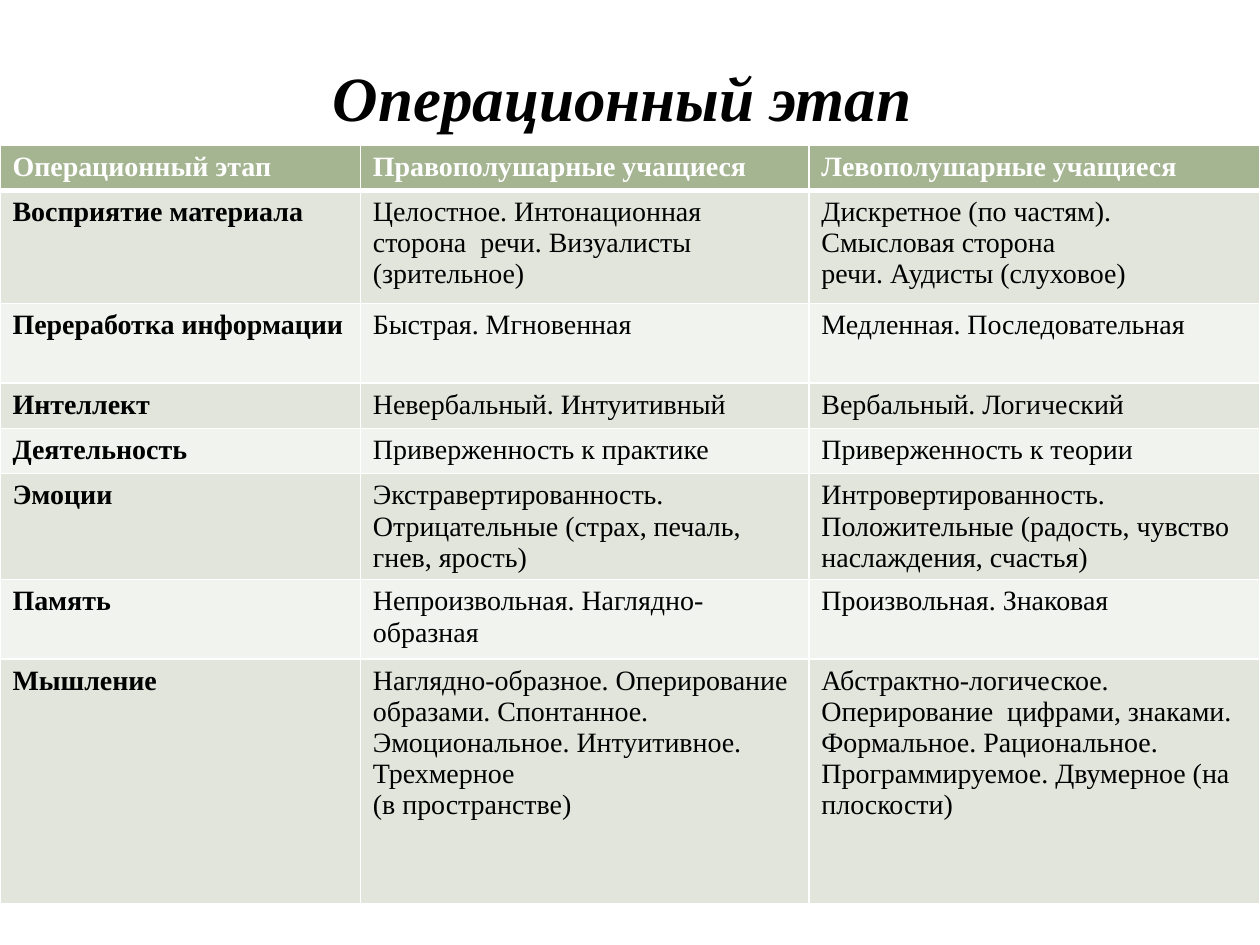
from lxml import etree
from pptx import Presentation
from pptx.dml.color import RGBColor
from pptx.enum.text import MSO_ANCHOR, PP_ALIGN
from pptx.oxml.ns import qn
from pptx.util import Inches, Pt

MIDDLE = MSO_ANCHOR.MIDDLE
CENTER = PP_ALIGN.CENTER
FONT = "Times New Roman"
WHITE, BLACK = "FFFFFF", "000000"
HEADER_FILL = "A5B592"
BAND_FILLS = ["F0F3EE", "E1E5DC"]
COLUMN_WIDTHS = [2.86, 3.56, 3.58]
ROW_HEIGHTS = [0.36, 0.9, 0.63, 0.36, 0.36, 0.8, 0.63, 1.94]

# Each line break within a cell starts a new paragraph
COMPARISON = [
    ("Операционный этап", "Правополушарные учащиеся", "Левополушарные учащиеся"),
    ("Восприятие материала",
     "Целостное. Интонационная сторона  речи. Визуалисты\n(зрительное)",
     "Дискретное (по частям).\nСмысловая сторона\nречи. Аудисты (слуховое)"),
    ("Переработка информации", "Быстрая. Мгновенная", "Медленная. Последовательная"),
    ("Интеллект", "Невербальный. Интуитивный", "Вербальный. Логический"),
    ("Деятельность", "Приверженность к практике", "Приверженность к теории"),
    ("Эмоции",
     "Экстравертированность. Отрицательные (страх, печаль, гнев, ярость)",
     "Интровертированность.\nПоложительные (радость, чувство наслаждения, счастья)"),
    ("Память", "Непроизвольная. Наглядно-образная", "Произвольная. Знаковая"),
    ("Мышление",
     "Наглядно-образное. Оперирование\n"
     "образами. Спонтанное. Эмоциональное. Интуитивное. Трехмерное\n"
     "(в пространстве)",
     "Абстрактно-логическое. Оперирование  цифрами, знаками. Формальное. "
     "Рациональное. Программируемое. Двумерное (на плоскости)"),
]


def style_text(text_frame, size, color, bold, italic=False):
    for paragraph in text_frame.paragraphs:
        for run in paragraph.runs:
            font = run.font
            font.name, font.size = FONT, Pt(size)
            font.bold, font.italic = bold, italic
            font.color.rgb = RGBColor.from_string(color)


def add_border(cell, side, width):
    line = etree.SubElement(cell._tc.get_or_add_tcPr(), qn(f"a:ln{side}"), w=str(Pt(width)))
    fill = etree.SubElement(line, qn("a:solidFill"))
    etree.SubElement(fill, qn("a:srgbClr"), val=WHITE)


prs = Presentation()
prs.slide_width, prs.slide_height = Inches(10), Inches(7.5)
slide = prs.slides.add_slide(prs.slide_layouts[5])

# Title
title = slide.shapes.title
title.left, title.top = Inches(0.5), Inches(0.3)
title.width, title.height = Inches(9), Inches(0.93)
title.text_frame.text = "Операционный этап "
title.text_frame.vertical_anchor = MIDDLE
title.text_frame.paragraphs[0].alignment = CENTER
style_text(title.text_frame, 36, BLACK, bold=True, italic=True)

# Comparison table
table = slide.shapes.add_table(
    len(ROW_HEIGHTS), len(COLUMN_WIDTHS), Inches(0), Inches(1.15),
    Inches(sum(COLUMN_WIDTHS)), Inches(sum(ROW_HEIGHTS))).table
for column, width in zip(table.columns, COLUMN_WIDTHS):
    column.width = Inches(width)
for row, height in zip(table.rows, ROW_HEIGHTS):
    row.height = Inches(height)

for r, entries in enumerate(COMPARISON):
    is_header = r == 0
    for c, entry in enumerate(entries):
        cell = table.cell(r, c)
        cell.text_frame.text = entry
        style_text(cell.text_frame, 16, WHITE if is_header else BLACK,
                   bold=is_header or c == 0)
        # The rule under the header is thicker than the others
        add_border(cell, "L", 1)
        add_border(cell, "R", 1)
        add_border(cell, "T", 3 if r == 1 else 1)
        add_border(cell, "B", 3 if is_header else 1)
        cell.fill.solid()
        cell.fill.fore_color.rgb = RGBColor.from_string(
            HEADER_FILL if is_header else BAND_FILLS[r % 2])

prs.save("out.pptx")
